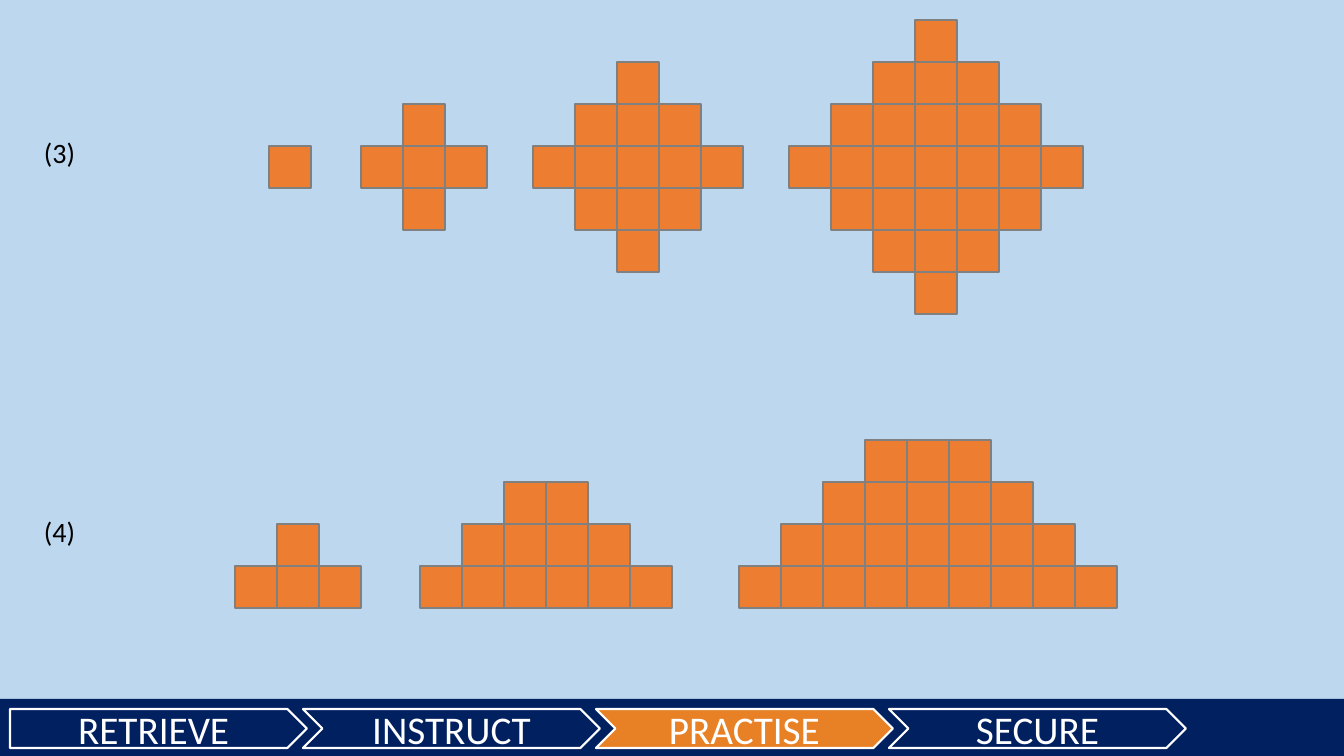
"""Build a practice slide with two growing tile patterns and a lesson stage bar."""
from dataclasses import dataclass

from pptx import Presentation
from pptx import util as u
from pptx.dml.color import RGBColor
from pptx.enum import shapes, text

PATTERNS = [
    {"label": "(3)", "label_top": 131, "widest_top": 146, "steps": [
        (269, [1]),
        (361, [1, 3, 1]),
        (533, [1, 3, 5, 3, 1]),
        (789, [1, 3, 5, 7, 5, 3, 1]),
    ]},
    {"label": "(4)", "label_top": 510, "widest_top": 566, "steps": [
        (235, [1, 3]),
        (420, [2, 4, 6]),
        (739, [3, 5, 7, 9]),
    ]},
]
STAGES = ["RETRIEVE", "INSTRUCT", "PRACTISE", "SECURE"]
CURRENT_STAGE = "PRACTISE"

SLIDE_W, SLIDE_H = 1344, 756
TILE = 42
LABEL_LEFT, LABEL_W, LABEL_H = 34, 65, 44
BAR_TOP = 699
STAGE_LEFT, STAGE_TOP, STAGE_W, STAGE_H, STAGE_STEP = 10, 709, 297, 39, 293
EMU_PER_PX = 12192000 / SLIDE_W


@dataclass(frozen=True)
class Theme:
    background: str = "BDD7EE"
    navy: str = "002060"
    current: str = "E88126"
    tile: str = "ED7D31"
    tile_edge: str = "808080"
    white: str = "FFFFFF"
    black: str = "000000"
    font: str = "Calibri"
    stage_size: int = 28
    label_size: int = 20
    line_width: float = 1.5


THEME = Theme()


def px(n):
    return u.Emu(round(n * EMU_PER_PX))


def rgb(value):
    return RGBColor.from_string(value)


def add_box(parent, kind, left, top, width, height, fill, line=None):
    sp = parent.add_shape(kind, px(left), px(top), px(width), px(height))
    sp.shadow.inherit = False
    sp.fill.solid()
    sp.fill.fore_color.rgb = rgb(fill)
    if line:
        sp.line.color.rgb = rgb(line)
        sp.line.width = u.Pt(THEME.line_width)
    else:
        sp.line.fill.background()
    return sp


def write(tf, words, size, color, align):
    tf.text = words
    tf.word_wrap = True
    p = tf.paragraphs[0]
    p.alignment = align
    font = p.runs[0].font
    font.name, font.size = THEME.font, u.Pt(size)
    font.color.rgb = rgb(color)


def add_stage_bar(s):
    kinds = shapes.MSO_SHAPE
    add_box(s.shapes, kinds.RECTANGLE, 0, BAR_TOP, SLIDE_W, SLIDE_H - BAR_TOP, THEME.navy)
    for i, stage in enumerate(STAGES):
        kind = kinds.CHEVRON if i else kinds.PENTAGON
        fill = THEME.current if stage == CURRENT_STAGE else THEME.navy
        sp = add_box(s.shapes, kind, STAGE_LEFT + i * STAGE_STEP, STAGE_TOP,
                     STAGE_W, STAGE_H, fill, THEME.white)
        sp.text_frame.vertical_anchor = text.MSO_ANCHOR.MIDDLE
        write(sp.text_frame, stage, THEME.stage_size, THEME.white, text.PP_ALIGN.CENTER)


def add_step(s, left, widest_top, rows):
    widest = max(rows)
    top = widest_top - rows.index(widest) * TILE
    parent = s.shapes.add_group_shape().shapes if len(rows) > 1 else s.shapes
    for i, count in enumerate(rows):
        row_left = left + (widest - count) * TILE / 2
        for j in range(count):
            add_box(parent, shapes.MSO_SHAPE.RECTANGLE, row_left + j * TILE, top + i * TILE,
                    TILE, TILE, THEME.tile, THEME.tile_edge)


def add_label(s, words, top):
    sp = s.shapes.add_textbox(px(LABEL_LEFT), px(top), px(LABEL_W), px(LABEL_H))
    write(sp.text_frame, words, THEME.label_size, THEME.black, text.PP_ALIGN.LEFT)
    sp.text_frame.auto_size = text.MSO_AUTO_SIZE.SHAPE_TO_FIT_TEXT


def main():
    prs = Presentation()
    prs.slide_width, prs.slide_height = px(SLIDE_W), px(SLIDE_H)
    s = prs.slides.add_slide(prs.slide_layouts[6])
    s.background.fill.solid()
    s.background.fill.fore_color.rgb = rgb(THEME.background)
    add_stage_bar(s)
    for pattern in PATTERNS:
        for left, rows in pattern["steps"]:
            add_step(s, left, pattern["widest_top"], rows)
        add_label(s, pattern["label"], pattern["label_top"])
    prs.save("out.pptx")


if __name__ == "__main__":
    main()
